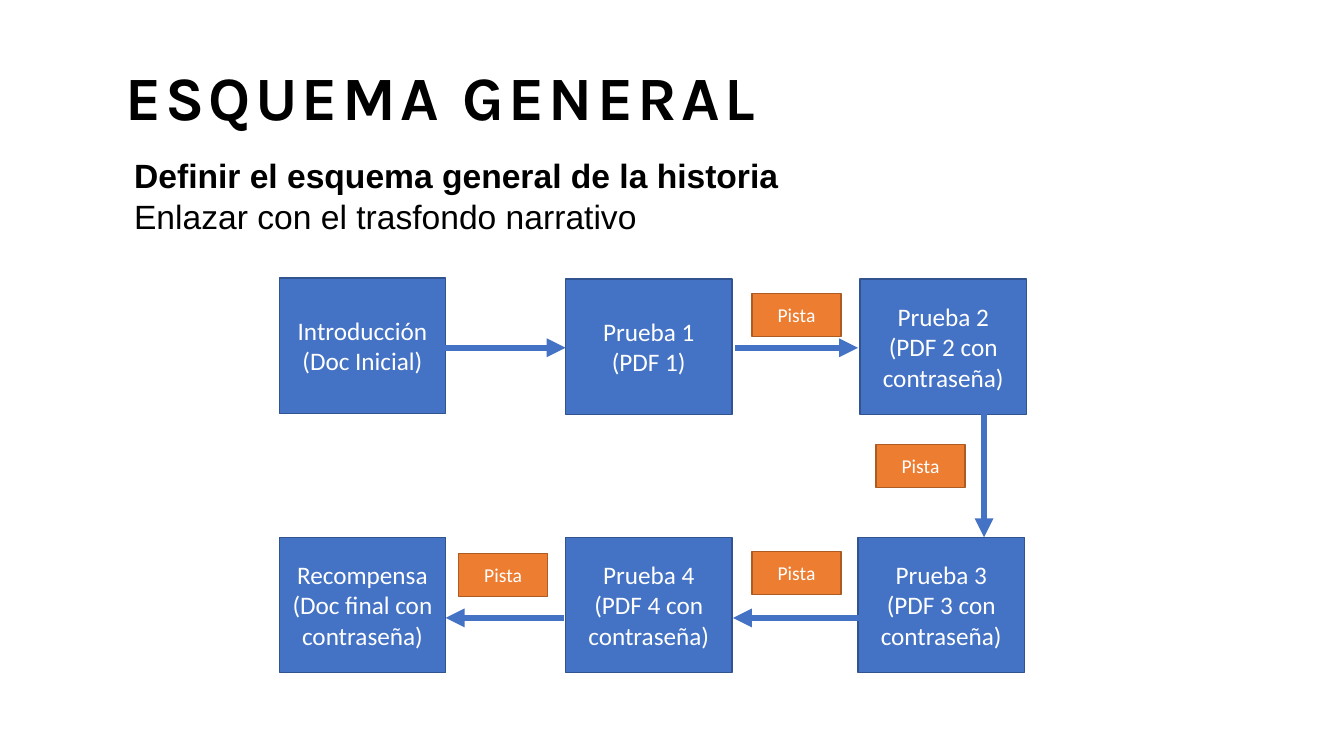
from dataclasses import dataclass
from pptx import Presentation
from pptx.dml.color import RGBColor
from pptx.enum.shapes import MSO_CONNECTOR, MSO_SHAPE
from pptx.enum.text import MSO_ANCHOR, MSO_AUTO_SIZE, PP_ALIGN
from pptx.oxml.ns import qn
from pptx.util import Inches, Pt
from lxml import etree

RECT = MSO_SHAPE.RECTANGLE
STRAIGHT = MSO_CONNECTOR.STRAIGHT
TOP, MIDDLE = MSO_ANCHOR.TOP, MSO_ANCHOR.MIDDLE
LEFT, CENTER = PP_ALIGN.LEFT, PP_ALIGN.CENTER
FIXED = MSO_AUTO_SIZE.NONE


@dataclass(frozen=True)
class Theme:
    ink: str = "000000"
    light: str = "FFFFFF"
    blue: str = "4472C4"
    navy: str = "31538F"
    orange: str = "ED7D31"
    rust: str = "AC5B23"
    head: str = "Karla"
    body: str = "Arial"
    label: str = "Calibri"
    title: int = 44
    lead: int = 24
    step: int = 18
    clue: int = 14
    edge: float = 1
    arrow: float = 4.5


THEME = Theme()

TITLE = "ESQUEMA GENERAL"
LEAD = ["Definir el esquema general de la historia", "Enlazar con el trasfondo narrativo"]
STEPS = [
    (2.77, 2.76, ["Introducción", "(Doc Inicial)"]),
    (5.61, 2.77, ["Prueba 1", "(PDF 1)"]),
    (8.53, 2.77, ["Prueba 2", "(PDF 2 con contraseña)"]),
    (8.51, 5.33, ["Prueba 3", "(PDF 3 con contraseña)"]),
    (5.61, 5.33, ["Prueba 4", "(PDF 4 con contraseña)"]),
    (2.77, 5.33, ["Recompensa", "(Doc final con contraseña)"]),
]
CLUE = "Pista"
CLUES = [(7.46, 2.91), (7.46, 5.47), (8.69, 4.41), (4.55, 5.49)]
ARROWS = [
    (4.4, 3.45, 5.61, 3.45),
    (7.29, 3.45, 8.51, 3.45),
    (9.76, 4.11, 9.76, 5.33),
    (8.53, 6.13, 7.27, 6.13),
    (5.59, 6.13, 4.42, 6.13),
]
STEP_SIZE = (1.65, 1.34)
CLUE_SIZE = (0.88, 0.43)


def rgb(code):
    return RGBColor.from_string(code)


def place(shape, left, top, width, height):
    shape.left, shape.top = Inches(left), Inches(top)
    shape.width, shape.height = Inches(width), Inches(height)


def write(shape, lines, font, size, color, bold=(), align=LEFT, anchor=TOP, pitch=1.0, track=0):
    frame = shape.text_frame
    frame.word_wrap = True
    frame.auto_size = FIXED
    frame.vertical_anchor = anchor
    frame.margin_left = frame.margin_right = Inches(0.1)
    frame.margin_top = frame.margin_bottom = Inches(0.05)
    for index, line in enumerate(lines):
        para = frame.paragraphs[0] if index == 0 else frame.add_paragraph()
        para.alignment = align
        para.line_spacing = pitch
        para.space_before = para.space_after = Pt(0)
        props = para._p.get_or_add_pPr()
        props.set("marL", "0")
        props.set("indent", "0")
        etree.SubElement(props, qn("a:buNone"))
        run = para.add_run()
        run.text = line
        run.font.name, run.font.size = font, Pt(size)
        run.font.color.rgb = rgb(color)
        run.font.bold = index in bold
        if track:
            run.font._element.set("spc", str(track))


def add_box(slide, left, top, size, lines, fill, edge, points):
    box = slide.shapes.add_shape(RECT, 0, 0, 0, 0)
    place(box, left, top, *size)
    box.shadow.inherit = False
    box.fill.solid()
    box.fill.fore_color.rgb = rgb(fill)
    box.line.color.rgb = rgb(edge)
    box.line.width = Pt(THEME.edge)
    write(box, lines, THEME.label, points, THEME.light, align=CENTER, anchor=MIDDLE)


def add_arrow(slide, ends):
    arrow = slide.shapes.add_connector(STRAIGHT, *map(Inches, ends))
    arrow.line.color.rgb = rgb(THEME.blue)
    arrow.line.width = Pt(THEME.arrow)
    props = arrow._element.spPr
    etree.SubElement(props.find(qn("a:ln")), qn("a:tailEnd"), type="triangle")
    etree.SubElement(props, qn("a:effectLst"))


def main():
    deck = Presentation()
    deck.slide_width, deck.slide_height = Inches(13.33), Inches(7.5)
    slide = deck.slides.add_slide(deck.slide_layouts[1])
    title, lead = slide.shapes.title, slide.placeholders[1]
    place(title, 1.14, 0.62, 11.03, 0.71)
    write(title, [TITLE], THEME.head, THEME.title, THEME.ink, bold=(0,), pitch=0.9, track=300)
    place(lead, 1.23, 1.49, 9.44, 0.91)
    write(lead, LEAD, THEME.body, THEME.lead, THEME.ink, bold=(0,))
    for left, top, lines in STEPS:
        add_box(slide, left, top, STEP_SIZE, lines, THEME.blue, THEME.navy, THEME.step)
    for ends in ARROWS:
        add_arrow(slide, ends)
    for left, top in CLUES:
        add_box(slide, left, top, CLUE_SIZE, [CLUE], THEME.orange, THEME.rust, THEME.clue)
    deck.save("out.pptx")


if __name__ == "__main__":
    main()
